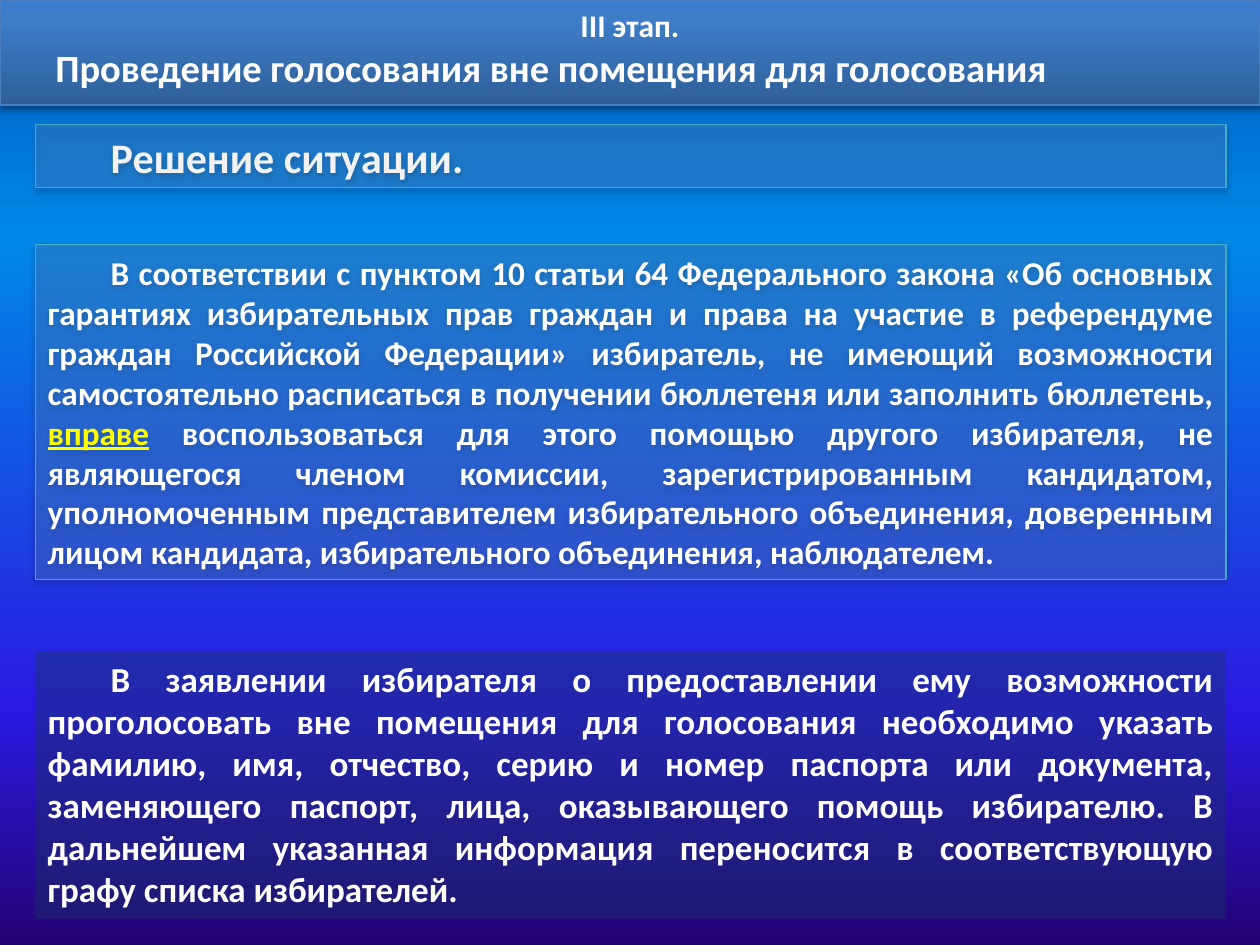
import pptx
import pptx.dml.color
import pptx.enum.shapes
import pptx.enum.text
import pptx.oxml
import pptx.oxml.ns
import pptx.util

Inches = pptx.util.Inches
Pt = pptx.util.Pt
RGBColor = pptx.dml.color.RGBColor
Align = pptx.enum.text.PP_ALIGN
Anchor = pptx.enum.text.MSO_ANCHOR
qn = pptx.oxml.ns.qn
NS = pptx.oxml.ns.nsdecls("a")

COLORS = {
    "white": "FFFFFF", "soft white": "F2F2F2", "yellow": "FFFF00",
    "panel": "558ED5", "panel line": "46AAC5",
    "note": "17375E", "header line": "4B7EBC",
}
PAGE_STOPS = [(0, "230373"), (25, "2C19E1"), (75, "0087E6"), (100, "005CBF")]
HEADER_STOPS = [(0, "2F5F99"), (80, "3D7CC7"), (100, "3A7CCB")]


def set_gradient(fill, element, stops):
    fill.gradient()
    fill.gradient_angle = 90
    stop_list = next(element.iter(qn("a:gsLst")))
    for stop in list(stop_list):
        stop_list.remove(stop)
    for position, color in stops:
        stop_list.append(pptx.oxml.parse_xml(
            f'<a:gs {NS} pos="{position * 1000}"><a:srgbClr val="{color}"/></a:gs>'))


def outline_with_shadow(shape, color):
    shape.line.color.rgb = RGBColor.from_string(COLORS[color])
    shape.line.width = Pt(0.75)
    shape.shadow.inherit = False
    shape.element.spPr.find(qn("a:effectLst")).append(pptx.oxml.parse_xml(
        f'<a:outerShdw {NS} blurRad="{Pt(3.1)}" dist="{Pt(1.8)}" dir="5400000" '
        'rotWithShape="0"><a:srgbClr val="000000"><a:alpha val="35000"/>'
        '</a:srgbClr></a:outerShdw>'))


deck = pptx.Presentation()
deck.slide_width = Inches(10)
deck.slide_height = Inches(7.5)
page = deck.slides.add_slide(deck.slide_layouts[5])
set_gradient(page.background.fill, page.element, PAGE_STOPS)

header = page.shapes.title
header.left, header.top = Inches(0), Inches(0)
header.width, header.height = Inches(10), Inches(0.77)
set_gradient(header.fill, header.element, HEADER_STOPS)
outline_with_shadow(header, "header line")
frame = header.text_frame
frame.text = "III\u00a0этап.\nПроведение голосования вне помещения для голосования"
frame.word_wrap = True
frame.vertical_anchor = Anchor.TOP
frame.auto_size = pptx.enum.text.MSO_AUTO_SIZE.SHAPE_TO_FIT_TEXT
for para, size, align in zip(frame.paragraphs, (18, 22), (Align.CENTER, Align.LEFT)):
    para.alignment = align
    font = para.runs[0].font
    font.name, font.size, font.bold = "Calibri", Pt(size), True
    font.color.rgb = RGBColor.from_string(COLORS["white"])
frame.paragraphs[1]._p.get_or_add_pPr().set("marL", str(Inches(0.34)))

panels = [
    {"top": 0.99, "height": 0.5, "fill": "panel", "alpha": 33, "outlined": True,
     "size": 24, "spans": [("Решение ситуации.", "soft white")]},
    {"top": 1.94, "height": 2.66, "fill": "panel", "alpha": 33, "outlined": True,
     "size": 19, "spans": [
         ("В соответствии с пунктом 10 статьи 64 Федерального закона «Об основных "
          "гарантиях избирательных прав граждан и права на участие в референдуме "
          "граждан Российской Федерации» избиратель, не имеющий возможности "
          "самостоятельно расписаться в получении бюллетеня или заполнить "
          "бюллетень, ", "white"),
         ("вправе", "yellow"),
         (" воспользоваться для этого помощью другого избирателя, не являющегося "
          "членом комиссии, зарегистрированным кандидатом, уполномоченным "
          "представителем избирательного объединения, доверенным лицом кандидата, "
          "избирательного объединения, наблюдателем.", "white")]},
    {"top": 5.17, "height": 2.12, "fill": "note", "alpha": 40, "outlined": False,
     "size": 20, "spans": [
         ("В заявлении избирателя о предоставлении ему возможности проголосовать "
          "вне помещения для голосования необходимо указать фамилию, имя, отчество, "
          "серию и номер паспорта или документа, заменяющего паспорт, лица, "
          "оказывающего помощь избирателю. В дальнейшем указанная информация "
          "переносится в соответствующую графу списка избирателей.", "white")]},
]

for panel in panels:
    box = page.shapes.add_shape(
        pptx.enum.shapes.MSO_SHAPE.RECTANGLE, Inches(0.28), Inches(panel["top"]),
        Inches(9.45), Inches(panel["height"]))
    box.fill.solid()
    box.fill.fore_color.rgb = RGBColor.from_string(COLORS[panel["fill"]])
    box.element.spPr.find(qn("a:solidFill"))[0].append(
        pptx.oxml.parse_xml(f'<a:alpha {NS} val="{panel["alpha"] * 1000}"/>'))
    if panel["outlined"]:
        outline_with_shadow(box, "panel line")
    else:
        box.line.fill.background()
        box.shadow.inherit = False
    frame = box.text_frame
    frame.word_wrap = True
    frame.vertical_anchor = Anchor.MIDDLE if panel["outlined"] else Anchor.TOP
    frame.auto_size = pptx.enum.text.MSO_AUTO_SIZE.SHAPE_TO_FIT_TEXT
    para = frame.paragraphs[0]
    para.alignment = Align.JUSTIFY
    para._p.get_or_add_pPr().set("indent", str(Inches(0.5)))
    for text, color in panel["spans"]:
        span = para.add_run()
        span.text = text
        span.font.name, span.font.size = "Calibri", Pt(panel["size"])
        span.font.bold = True
        span.font.underline = color == "yellow"
        span.font.color.rgb = RGBColor.from_string(COLORS[color])

deck.save("out.pptx")
